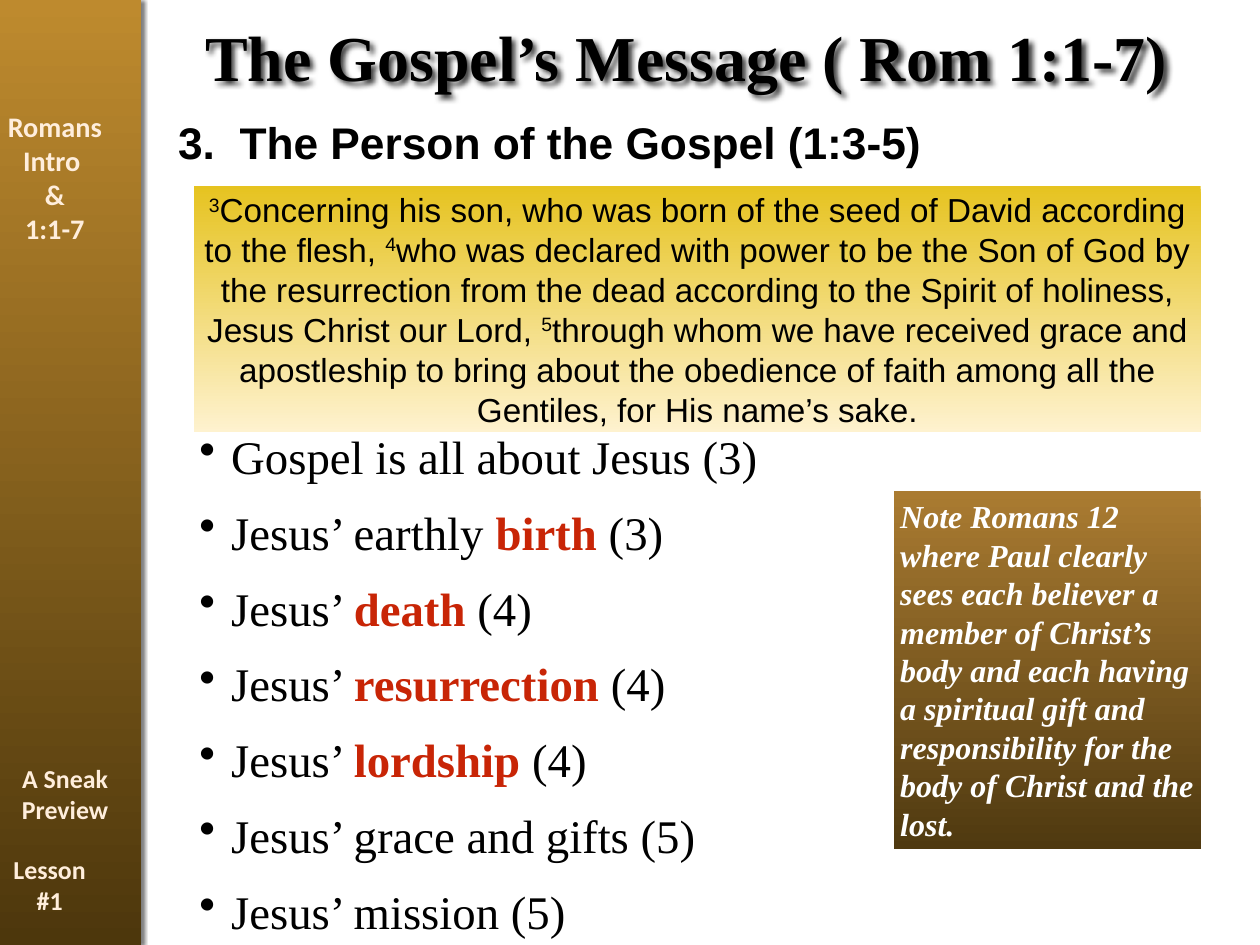
from lxml import etree
from pptx import Presentation
from pptx import util as u
from pptx.dml.color import RGBColor
from pptx.enum import shapes, text
from pptx.oxml import ns

PX = 9144  # one hundred px to the inch
SERIF, SANS, SIDE = "Times New Roman", "Arial", "Calibri"
BLACK, WHITE, CREAM, RED = "000000", "FFFFFF", "FFEEDC", "C82506"
LEFT, CENTER = text.PP_ALIGN.LEFT, text.PP_ALIGN.CENTER
TOP, MIDDLE = text.MSO_ANCHOR.TOP, text.MSO_ANCHOR.MIDDLE


def px(value):
    return u.Emu(value * PX)


def color(value):
    return RGBColor.from_string(value)


def child(parent, tag, **attributes):
    element = etree.SubElement(parent, ns.qn(tag))
    for name, value in attributes.items():
        element.set(name, str(value))
    return element


def add_shadow(shape, blur, distance, angle, alpha):
    shape.shadow.inherit = False
    effects = shape._element.spPr.find(ns.qn("a:effectLst"))
    shadow = child(effects, "a:outerShdw", blurRad=u.Pt(blur), dist=u.Pt(distance),
                   dir=angle * 60000, algn="ctr", rotWithShape=0)
    shade = child(shadow, "a:srgbClr", val=BLACK)
    child(shade, "a:alpha", val=alpha * 1000)


def add_bullet(paragraph, indent):
    properties = paragraph._p.get_or_add_pPr()
    properties.set("marL", str(px(indent)))
    properties.set("indent", str(-px(indent)))
    child(properties, "a:buChar", char="•")


def write(shape, lines, size, name, ink, align=LEFT, anchor=MIDDLE, inset=6,
          bold=False, italic=False, gap=0, bullet=0, wrap=True):
    """Each line is a list of (words, style) runs; style is '', 'red' or 'raised'."""
    frame = shape.text_frame
    frame.word_wrap = wrap
    frame.auto_size = text.MSO_AUTO_SIZE.NONE
    frame.vertical_anchor = anchor
    frame.margin_left = frame.margin_right = px(inset)
    frame.margin_top = frame.margin_bottom = px(inset)
    for index, line in enumerate(lines):
        paragraph = frame.paragraphs[0] if index == 0 else frame.add_paragraph()
        paragraph.alignment = align
        paragraph.line_spacing = u.Pt(size * 1.2)
        paragraph.space_before = u.Pt(gap if index else 0)
        if bullet:
            add_bullet(paragraph, bullet)
        font = paragraph.font
        font.size, font.name = u.Pt(size), name
        font.bold, font.italic = bold, italic
        font.color.rgb = color(ink)
        for words, style in line:
            run = paragraph.add_run()
            run.text = words
            if style == "red":
                run.font.bold = True
                run.font.color.rgb = color(RED)
            elif style == "raised":
                run._r.get_or_add_rPr().set("baseline", "32000")


def plain(*lines):
    return [[(line, "")] for line in lines]


def add_text(slide, box, *content, **options):
    shape = slide.shapes.add_textbox(*map(px, box))
    write(shape, *content, **options)


def add_panel(slide, box, first, last):
    shape = slide.shapes.add_shape(shapes.MSO_SHAPE.RECTANGLE, *map(px, box))
    shape.shadow.inherit = False
    shape.line.fill.background()
    shape.fill.gradient()
    shape.fill.gradient_angle = 270
    for stop, value in zip(shape.fill.gradient_stops, (first, last)):
        stop.color.rgb = color(value)
    return shape


def add_sidebar(slide, box):
    left, top, width, height = box
    bar = add_panel(slide, box, "BE8A2E", "4D370C")
    add_shadow(bar, 3, 2, 0, 50)
    labels = [
        (960, 112, 78, 21, ("Lesson", "#1")),
        (125, 124, 150, 23, ("Romans ", "Intro ", "&", "1:1-7")),
        (857, 147, 78, 21, ("A Sneak Preview",)),
    ]
    for offset, label_width, label_height, size, lines in labels:
        add_text(slide, (left, top + offset, label_width, label_height),
                 plain(*lines), size, SIDE, CREAM, align=CENTER, bold=True)


def add_title(slide, box):
    title = slide.shapes.title
    title.left, title.top, title.width, title.height = map(px, box)
    write(title, plain("The Gospel’s Message ( Rom 1:1-7)"), 52, SERIF, BLACK,
          align=CENTER, inset=0, bold=True, wrap=False)
    add_shadow(title, 4, 3, 45, 75)


def add_verses(slide, box):
    verses = [
        ("3", "Concerning his son, who was born of the seed of David according to the flesh, "),
        ("4", "who was declared with power to be the Son of God by the resurrection from the "
              "dead according to the Spirit of holiness, Jesus Christ our Lord, "),
        ("5", "through whom we have received grace and apostleship to bring about the "
              "obedience of faith among all the Gentiles, for His name’s sake."),
    ]
    runs = []
    for number, words in verses:
        runs += [(number, "raised"), (words, "")]
    panel = add_panel(slide, box, "E6C320", "FEF2CF")
    write(panel, [runs], 27, SANS, BLACK, align=CENTER, inset=0)


def add_points(slide, box):
    marked = [("earthly ", "birth", 3), ("", "death", 4),
              ("", "resurrection", 4), ("", "lordship", 4)]
    points = plain("Gospel is all about Jesus (3)")
    points += [[("Jesus’ " + lead, ""), (word, "red"), (f" ({verse})", "")]
               for lead, word, verse in marked]
    points += plain("Jesus’ grace and gifts (5)", "Jesus’ mission (5)")
    add_text(slide, box, points, 38, SERIF, BLACK, anchor=TOP, gap=16, bullet=36)


def add_note(slide, box):
    note = ("Note Romans 12 where Paul clearly sees each believer a member of Christ’s body "
            "and each having a spiritual gift and responsibility for the body of Christ "
            "and the lost.")
    panel = add_panel(slide, box, "AA7B31", "4F3910")
    write(panel, plain(note), 26, SERIF, WHITE, anchor=TOP, inset=7,
          bold=True, italic=True)


def main():
    presentation = Presentation()
    presentation.slide_width, presentation.slide_height = px(1422), px(1067)
    slide = presentation.slides.add_slide(presentation.slide_layouts[5])

    # Sidebar and title
    add_sidebar(slide, (0, 0, 159, 1067))
    add_title(slide, (230, 17, 1089, 93))

    # Points, heading, quoted verses and side note
    add_points(slide, (219, 477, 714, 588))
    add_text(slide, (195, 125, 865, 71), plain("3.  The Person of the Gospel (1:3-5)"),
             36, SANS, BLACK, bold=True, wrap=False)
    add_verses(slide, (219, 210, 1136, 278))
    add_note(slide, (1009, 554, 346, 405))

    presentation.save("out.pptx")


if __name__ == "__main__":
    main()
